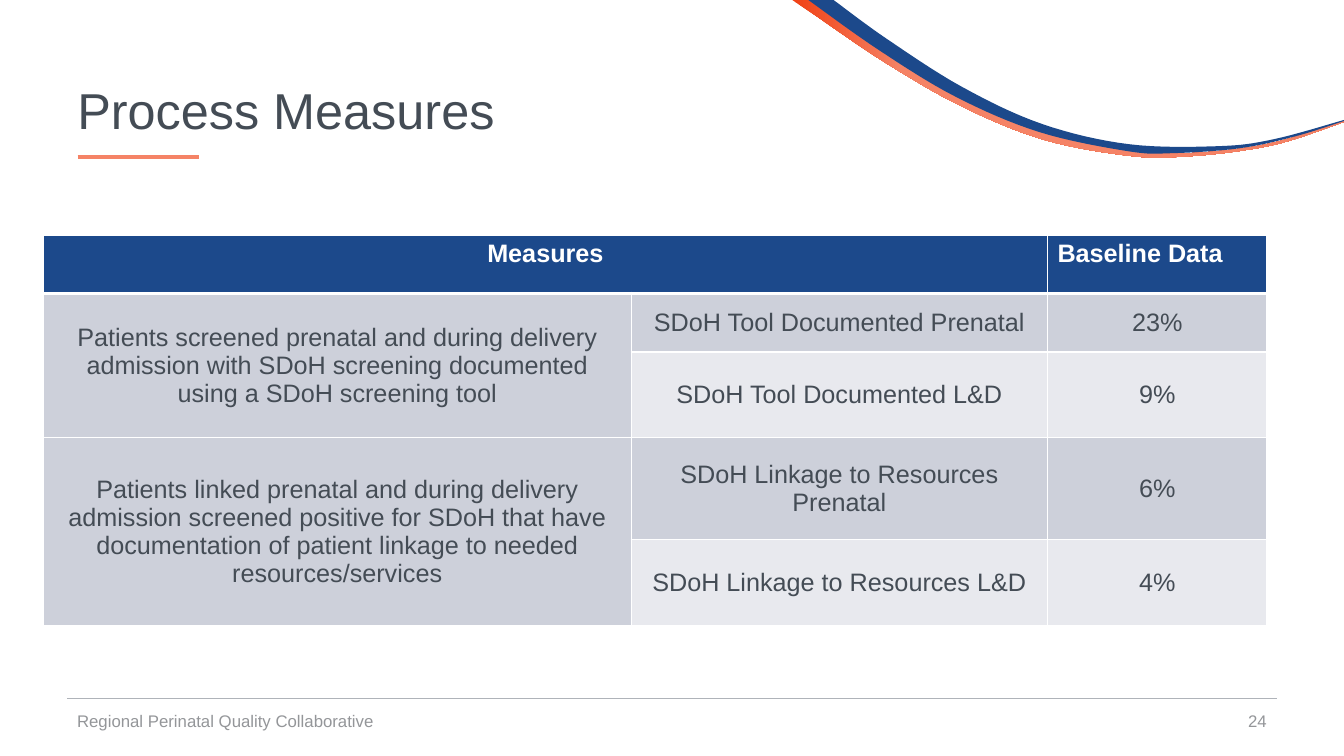
from lxml import etree
from pptx import Presentation
from pptx.dml.color import RGBColor
from pptx.enum.shapes import MSO_CONNECTOR as Connector
from pptx.enum.text import MSO_ANCHOR as Anchor, PP_ALIGN as Align
from pptx.oxml import parse_xml
from pptx.oxml.ns import nsdecls, qn
from pptx.util import Pt

WHITE = RGBColor(0xFF, 0xFF, 0xFF)
NAVY = RGBColor(0x1C, 0x49, 0x8B)
ORANGE = RGBColor(0xF0, 0x41, 0x15)
CORAL = RGBColor(0xF5, 0x83, 0x66)
SLATE = RGBColor(0x44, 0x4C, 0x55)
FOOTER_GRAY = RGBColor(0x94, 0x96, 0x99)
RULE_GRAY = RGBColor(0xAF, 0xB3, 0xB9)
BAND_DARK = RGBColor(0xCD, 0xD0, 0xDA)
BAND_LIGHT = RGBColor(0xE8, 0xE9, 0xEE)

# Edges of the two ribbons: upper left to right, lower right to left
CORAL_UPPER = [(579.6, 0), (635, 38.9), (689.8, 71.3), (748.1, 95.8), (810, 108),
               (848.9, 109.4), (888.5, 105.8), (919.4, 99.4), (960, 86.4)]
CORAL_LOWER = [(960, 87.1), (920.2, 100.8), (889.2, 107.3), (849.6, 111.6), (809.3, 111.6),
               (746.6, 100.1), (687.6, 76.3), (632.2, 44.6), (578.9, 8.6), (565.9, 0)]
NAVY_UPPER = [(595.4, 0), (632.9, 27.4), (686.9, 61.9), (744.5, 88.6), (806.4, 103),
              (870.5, 104.4), (910.1, 99.4), (960, 85.7)]
NAVY_LOWER = [(960, 86.4), (925.9, 97.2), (886.3, 105.8), (838.1, 109.4), (805.7, 108),
              (742.3, 94.3), (682.6, 69.1), (627.1, 35.3), (577.4, 0)]

HEADER = ["Measures", "", "Baseline Data"]
MEASURES = [
    ("Patients screened prenatal and during delivery admission with SDoH screening "
     "documented using a SDoH screening tool", "SDoH Tool Documented Prenatal", "23%"),
    ("", "SDoH Tool Documented L&D", "9%"),
    ("Patients linked prenatal and during delivery admission screened positive for SDoH "
     "that have documentation of patient linkage to needed resources/services",
     "SDoH Linkage to Resources Prenatal", "6%"),
    ("", "SDoH Linkage to Resources L&D", "4%"),
]
COLUMN_WIDTHS = [419.8, 297.4, 156.9]
ROW_HEIGHTS = [41.8, 41.8, 61.2, 72.7, 61.9]


def smooth_curve(knots, steps=8):
    """Sample a Catmull-Rom curve through the knots."""
    padded = [knots[0], *knots, knots[-1]]
    points = [knots[0]]
    for a, b, c, d in zip(padded, padded[1:], padded[2:], padded[3:]):
        for step in range(1, steps + 1):
            t = step / steps
            points.append(tuple(
                0.5 * (2 * q + (r - p) * t + (2 * p - 5 * q + 4 * r - s) * t ** 2
                       + (3 * q - p - 3 * r + s) * t ** 3)
                for p, q, r, s in zip(a, b, c, d)))
    return points


class SlideBuilder:
    font_name = "Arial"

    def __init__(self, slide):
        self.slide = slide

    def set_text(self, frame, text, size, color, align=Align.LEFT, bold=False):
        frame.text = text
        paragraph = frame.paragraphs[0]
        paragraph.alignment = align
        font = paragraph.font
        font.name, font.size, font.bold = self.font_name, Pt(size), bold
        font.color.rgb = color
        return paragraph

    def title(self, text, left, top, width, height):
        shape = self.slide.shapes.title
        shape.left, shape.top, shape.width, shape.height = map(Pt, (left, top, width, height))
        shape.text_frame.vertical_anchor = Anchor.MIDDLE
        self.set_text(shape.text_frame, text, 36, SLATE).line_spacing = 0.9

    def text(self, text, left, top, width, height, align=Align.LEFT):
        frame = self.slide.shapes.add_textbox(*map(Pt, (left, top, width, height))).text_frame
        frame.word_wrap = True
        frame.vertical_anchor = Anchor.MIDDLE
        self.set_text(frame, text, 12, FOOTER_GRAY, align)

    def rule(self, left, right, y, color, weight):
        line = self.slide.shapes.add_connector(
            Connector.STRAIGHT, Pt(left), Pt(y), Pt(right), Pt(y))
        line.line.color.rgb = color
        line.line.width = Pt(weight)
        etree.SubElement(line._element.spPr, qn("a:effectLst"))

    def ribbon(self, upper, lower, color, start_color=None):
        points = [(Pt(x), Pt(y)) for x, y in smooth_curve(upper) + smooth_curve(lower)]
        builder = self.slide.shapes.build_freeform(*points[0])
        builder.add_line_segments(points[1:], close=True)
        shape = builder.convert_to_shape()
        shape.shadow.inherit = False
        shape.line.fill.background()
        if start_color is None:
            shape.fill.solid()
            shape.fill.fore_color.rgb = color
            return
        shape.fill.gradient()
        shape.fill.gradient_angle = 0
        stops = zip(shape.fill.gradient_stops, (start_color, color), (0, 0.2))
        for stop, stop_color, position in stops:
            stop.color.rgb = stop_color
            stop.position = position

    def borders(self, cell, top, bottom):
        properties = cell._tc.get_or_add_tcPr()
        for index, (side, weight) in enumerate(
                (("L", 1), ("R", 1), ("T", top), ("B", bottom))):
            properties.insert(index, parse_xml(
                f'<a:ln{side} {nsdecls("a")} w="{Pt(weight)}"><a:solidFill>'
                f'<a:srgbClr val="{WHITE}"/></a:solidFill></a:ln{side}>'))

    def table(self, rows, left, top, widths, heights):
        table = self.slide.shapes.add_table(
            len(rows), len(widths), Pt(left), Pt(top), Pt(sum(widths)), Pt(sum(heights))).table
        for column, width in zip(table.columns, widths):
            column.width = Pt(width)
        for row, height in zip(table.rows, heights):
            row.height = Pt(height)
        for r, values in enumerate(rows):
            for c, value in enumerate(values):
                cell = table.cell(r, c)
                is_header = r == 0
                band = BAND_DARK if c == 0 or r % 2 else BAND_LIGHT
                cell.fill.solid()
                cell.fill.fore_color.rgb = NAVY if is_header else band
                cell.vertical_anchor = Anchor.TOP if is_header else Anchor.MIDDLE
                align = Align.LEFT if is_header and c == 2 else Align.CENTER
                self.set_text(cell.text_frame, value, 18, WHITE if is_header else SLATE,
                              align, is_header)
                self.borders(cell, 3 if r == 1 else 1, 3 if is_header else 1)
        return table


def main():
    presentation = Presentation()
    presentation.slide_width, presentation.slide_height = Pt(960), Pt(540)
    slide = presentation.slides.add_slide(presentation.slide_layouts[5])
    builder = SlideBuilder(slide)

    # Corner ribbons
    builder.ribbon(CORAL_UPPER, CORAL_LOWER, CORAL, start_color=ORANGE)
    builder.ribbon(NAVY_UPPER, NAVY_LOWER, NAVY)

    # Title
    builder.title("Process Measures", 48, 28.8, 864, 104.4)
    builder.rule(55.4, 141.8, 112.3, CORAL, 2.5)

    # Measures table
    table = builder.table([HEADER, *MEASURES], 31, 167.8, COLUMN_WIDTHS, ROW_HEIGHTS)
    table.cell(0, 0).merge(table.cell(0, 1))
    for first in (1, 3):
        table.cell(first, 0).merge(table.cell(first + 1, 0))

    # Footer
    builder.rule(48, 912, 499, RULE_GRAY, 0.5)
    builder.text("Regional Perinatal Quality Collaborative", 48, 500.4, 324, 28.8)
    builder.text("24", 696, 500.4, 216, 28.8, Align.RIGHT)

    presentation.save("out.pptx")


if __name__ == "__main__":
    main()
